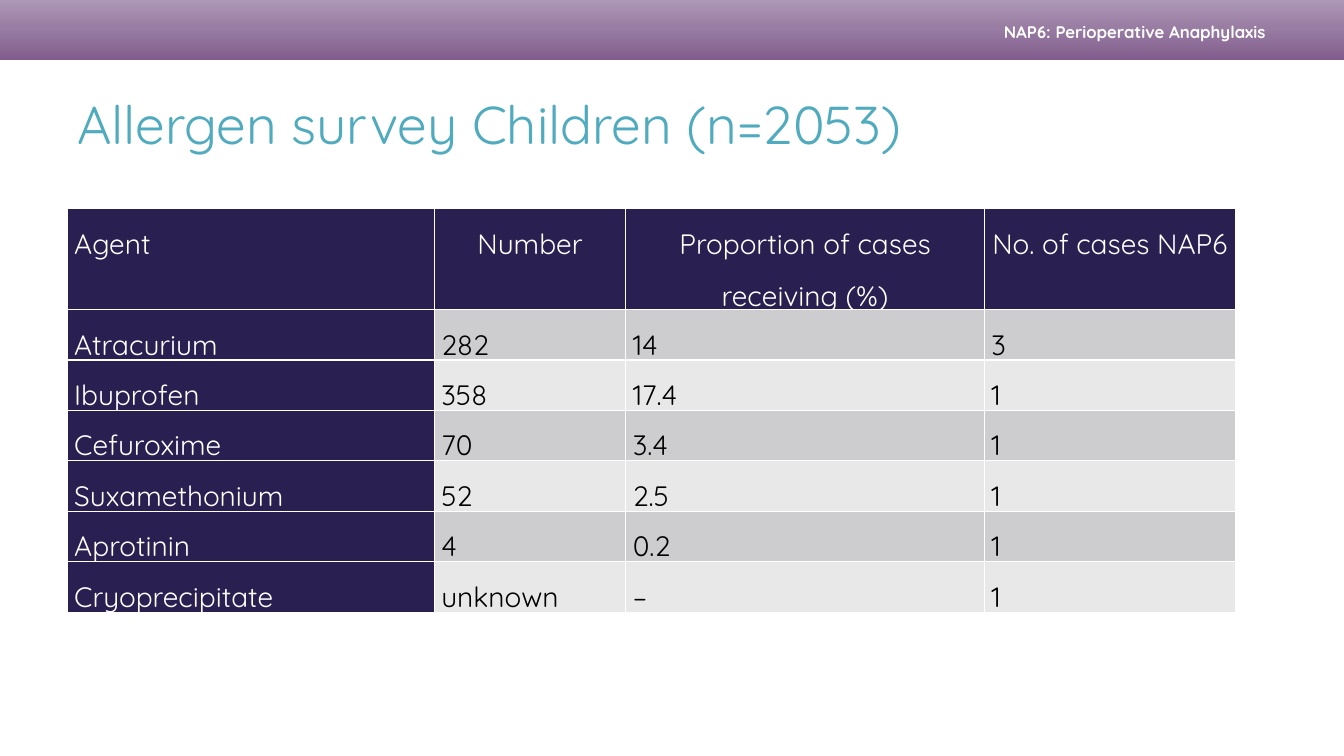
from copy import deepcopy

from lxml import etree
from pptx import Presentation
from pptx import util as u
from pptx.dml.color import RGBColor
from pptx.enum import shapes, text
from pptx.oxml import ns

COLOURS = {
    "white": "FFFFFF",
    "black": "000000",
    "teal": "50ABBF",
    "navy": "291F51",
    "grey": "CDCDD0",
    "pale": "E8E8E9",
    "plum": "815D8D",
    "mauve": "997DA3",
    "lilac": "AD98B6",
}
AGENTS = [
    ("Agent", "Number", "Proportion of cases receiving (%)", "No. of cases NAP6"),
    ("Atracurium", "282", "14", "3"),
    ("Ibuprofen", "358", "17.4", "1"),
    ("Cefuroxime", "70", "3.4", "1"),
    ("Suxamethonium", "52", "2.5", "1"),
    ("Aprotinin", "4", "0.2", "1"),
    ("Cryoprecipitate", "unknown", "–", "1"),
]


def rgb(name):
    return RGBColor.from_string(COLOURS[name])


def write(frame, words, font="Quicksand", size=20, colour="black", bold=False,
          align=text.PP_ALIGN.LEFT, spacing=None, after=None):
    para = frame.paragraphs[0]
    para.alignment = align
    para.line_spacing = spacing
    para.space_after = after
    span = para.add_run()
    span.text = words
    span.font.name = font
    span.font.size = u.Pt(size)
    span.font.bold = bold
    span.font.color.rgb = rgb(colour)


class SlideBuilder:
    COLUMNS, ROWS = 160, 90

    def __init__(self, deck):
        self.width, self.height = deck.slide_width, deck.slide_height
        self.page = deck.slides.add_slide(deck.slide_layouts[6])

    def across(self, columns):
        return round(self.width * columns / self.COLUMNS)

    def down(self, rows):
        return round(self.height * rows / self.ROWS)

    def area(self, left, top, width, height):
        return self.across(left), self.down(top), self.across(width), self.down(height)

    def band(self, *area, stops):
        box = self.page.shapes.add_shape(shapes.MSO_SHAPE.RECTANGLE, *self.area(*area))
        box.shadow.inherit = False
        box.line.fill.background()
        box.fill.gradient()
        box.fill.gradient_angle = 90
        stop_list = box.fill._fill._gradFill.gsLst
        stop_list.append(deepcopy(stop_list[-1]))
        for stop, (position, colour) in zip(box.fill.gradient_stops, stops):
            stop.position = position
            stop.color.rgb = rgb(colour)

    def label(self, words, *area, right_inset=1.2, **style):
        box = self.page.shapes.add_textbox(*self.area(*area))
        frame = box.text_frame
        frame.word_wrap = True
        frame.vertical_anchor = text.MSO_ANCHOR.MIDDLE
        frame.margin_right = self.across(right_inset)
        write(frame, words, **style)

    def border(self, cell):
        properties = cell._tc.get_or_add_tcPr()
        for place, side in enumerate(("lnL", "lnR", "lnT", "lnB")):
            line = etree.Element(ns.qn(f"a:{side}"), w=str(u.Pt(1)))
            fill = etree.SubElement(line, ns.qn("a:solidFill"))
            etree.SubElement(fill, ns.qn("a:srgbClr"), val=COLOURS["white"])
            properties.insert(place, line)

    def table(self, records, left, top, widths, heights):
        area = self.area(left, top, sum(widths), sum(heights))
        table = self.page.shapes.add_table(len(records), len(widths), *area).table
        for column, width in zip(table.columns, widths):
            column.width = self.across(width)
        for row, height in zip(table.rows, heights):
            row.height = self.down(height)
        for r, record in enumerate(records):
            for c, words in enumerate(record):
                self.cell(table.cell(r, c), words, r, c)

    def cell(self, cell, words, r, c):
        heading = r == 0 or c == 0
        centred = r == 0 and c > 0
        cell.margin_left = cell.margin_right = u.Inches(0.07)
        cell.margin_top = cell.margin_bottom = 0
        cell.fill.solid()
        cell.fill.fore_color.rgb = rgb("navy" if heading else "grey" if r % 2 else "pale")
        self.border(cell)
        write(cell.text_frame, words, colour="white" if heading else "black",
              align=text.PP_ALIGN.CENTER if centred else text.PP_ALIGN.LEFT,
              spacing=1.5, after=u.Pt(10))


def main():
    deck = Presentation()
    deck.slide_width, deck.slide_height = u.Inches(13.33), u.Inches(7.5)
    slide = SlideBuilder(deck)
    slide.band(0, 0, 160, 7.2, stops=[(0, "plum"), (0.55, "mauve"), (1, "lilac")])
    slide.label("NAP6: Perioperative Anaphylaxis", 100.2, 2.16, 53.4, 3.36,
                right_inset=2.9, size=12, colour="white", bold=True,
                align=text.PP_ALIGN.RIGHT)
    slide.label("Allergen survey Children (n=2053)", 8, 7.2, 144, 15,
                size=38, colour="teal")
    slide.table(AGENTS, 8, 24.84, widths=[43.7, 22.8, 42.7, 29.9],
                heights=[11.9] + [6] * 6)
    deck.save("out.pptx")


if __name__ == "__main__":
    main()
